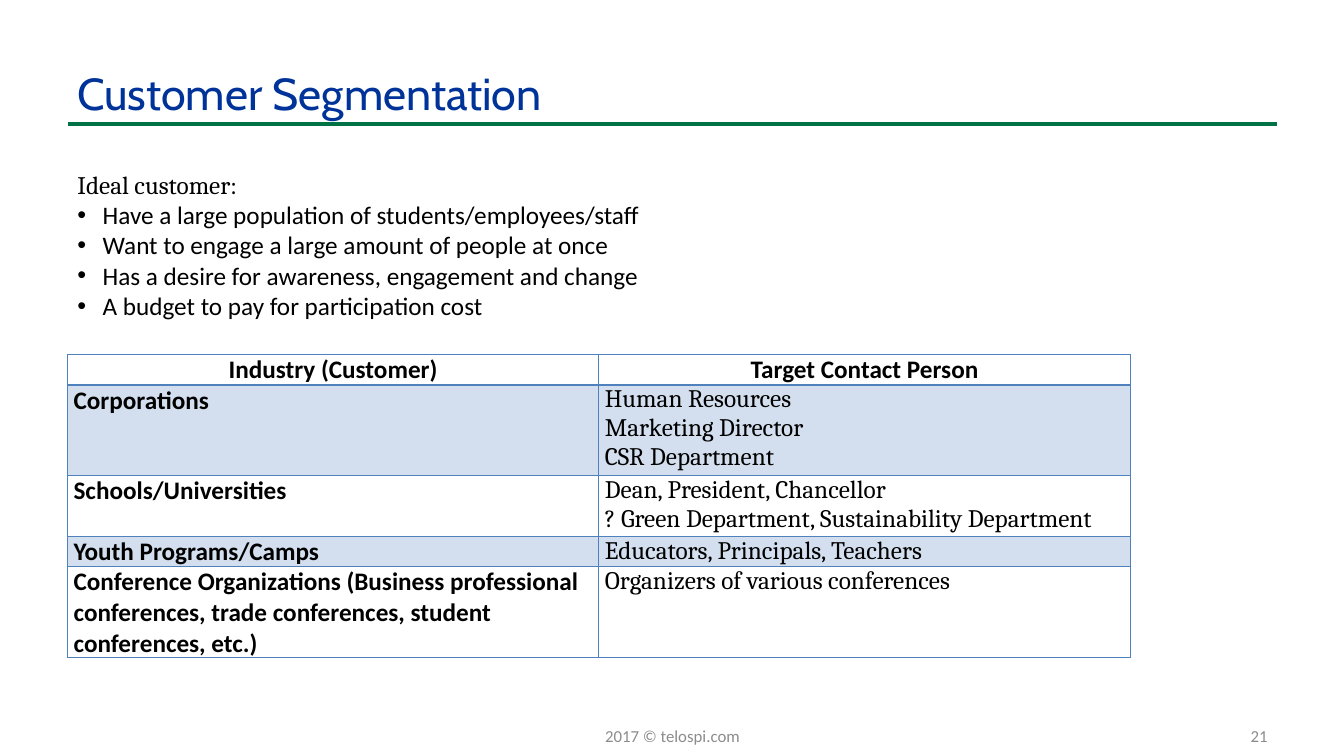
"""Build the Customer Segmentation slide."""
from lxml import etree
from pptx import Presentation
from pptx.dml.color import RGBColor
from pptx.enum.shapes import MSO_CONNECTOR
from pptx.enum.text import MSO_ANCHOR, PP_ALIGN
from pptx.oxml.ns import qn
from pptx.util import Inches, Pt

TITLE = "Customer Segmentation"
INTRO = "Ideal customer:"
TRAITS = [
    "Have a large population of students/employees/staff",
    "Want to engage a large amount of people at once",
    "Has a desire for awareness, engagement and change",
    "A budget to pay for participation cost",
]
HEADINGS = ("Industry (Customer)", "Target Contact Person")
SEGMENTS = [
    ("Corporations", ["Human Resources", "Marketing Director", "CSR Department"], 3),
    ("Schools/Universities",
     ["Dean, President, Chancellor", "? Green Department, Sustainability Department"], 2),
    ("Youth Programs/Camps", ["Educators, Principals, Teachers"], 1),
    ("Conference Organizations (Business professional conferences, "
     "trade conferences, student conferences, etc.)",
     ["Organizers of various conferences"], 3),
]
FOOTER = "2017 © telospi.com"
PAGE_NUMBER = "21"

BLACK = RGBColor(0x00, 0x00, 0x00)
WHITE = RGBColor(0xFF, 0xFF, 0xFF)
NAVY = RGBColor(0x00, 0x33, 0x99)
GREEN = RGBColor(0x00, 0x72, 0x45)
GRAY = RGBColor(0x8C, 0x8C, 0x8C)
BAND = RGBColor(0xD3, 0xDF, 0xEE)
BORDER = RGBColor(0x4F, 0x81, 0xBD)
LEFT, CENTER, RIGHT = PP_ALIGN.LEFT, PP_ALIGN.CENTER, PP_ALIGN.RIGHT
TOP, MIDDLE = MSO_ANCHOR.TOP, MSO_ANCHOR.MIDDLE
STRAIGHT = MSO_CONNECTOR.STRAIGHT

MARGIN = 0.67
LINE_HEIGHT = 0.3
COLUMN_WIDTH = 5.27


def set_font(para, name, size=18, color=BLACK, bold=False):
    font = para.font
    font.name, font.size, font.bold = name, Pt(size), bold
    font.color.rgb = color


def add_box(page, left, top, width, height, anchor=MIDDLE):
    box = page.shapes.add_textbox(Inches(left), Inches(top), Inches(width), Inches(height))
    frame = box.text_frame
    frame.word_wrap = True
    frame.vertical_anchor = anchor
    return frame


def add_label(page, place, text, align, name, size, color):
    para = add_box(page, *place).paragraphs[0]
    para.text, para.alignment = text, align
    set_font(para, name, size, color)
    return para


def add_bullet(para):
    properties = para._p.get_or_add_pPr()
    properties.set("marL", str(Inches(0.25)))
    properties.set("indent", str(-Inches(0.25)))
    etree.SubElement(properties, qn("a:buFont")).set("typeface", "Arial")
    etree.SubElement(properties, qn("a:buChar")).set("char", "•")


def add_rule(page):
    y = Inches(1.23)
    rule = page.shapes.add_connector(STRAIGHT, Inches(MARGIN), y, Inches(12.67), y)
    rule.line.color.rgb = GREEN
    rule.line.width = Pt(2.25)
    etree.SubElement(rule._element.spPr, qn("a:effectLst"))


def add_traits(page):
    frame = add_box(page, MARGIN, 1.63, 10.1, 1.61, TOP)
    intro = frame.paragraphs[0]
    intro.text = INTRO
    set_font(intro, "Cambria")
    for trait in TRAITS:
        para = frame.add_paragraph()
        para.text = trait
        add_bullet(para)
        set_font(para, "Calibri")


def set_borders(cell, top, bottom):
    properties = cell._tc.get_or_add_tcPr()
    for side, width in (("L", 1), ("R", 1), ("T", top), ("B", bottom)):
        line = etree.SubElement(properties, qn("a:ln" + side), w=str(Pt(width)))
        fill = etree.SubElement(line, qn("a:solidFill"))
        etree.SubElement(fill, qn("a:srgbClr")).set("val", str(BORDER))


def fill_cell(cell, row, lines, align, name, bold):
    cell.margin_left = cell.margin_right = Inches(0.06)
    cell.margin_top = cell.margin_bottom = 0
    set_borders(cell, 2.25 if row == 1 else 1, 2.25 if row == 0 else 1)
    cell.fill.solid()
    cell.fill.fore_color.rgb = BAND if row % 2 else WHITE
    cell.text = "\n".join(lines)
    for para in cell.text_frame.paragraphs:
        para.alignment = align
        set_font(para, name, bold=bold)


def add_segments(page):
    line_counts = [1] + [count for _, _, count in SEGMENTS]
    frame = page.shapes.add_table(
        len(line_counts), 2, Inches(MARGIN), Inches(3.52),
        Inches(2 * COLUMN_WIDTH), Inches(LINE_HEIGHT * sum(line_counts)))
    table = frame.table
    table.first_row = table.horz_banding = False
    for column in table.columns:
        column.width = Inches(COLUMN_WIDTH)
    for row, count in zip(table.rows, line_counts):
        row.height = Inches(LINE_HEIGHT * count)
    for column, heading in enumerate(HEADINGS):
        fill_cell(table.cell(0, column), 0, [heading], CENTER, "Calibri", True)
    for row, (industry, contacts, _) in enumerate(SEGMENTS, 1):
        fill_cell(table.cell(row, 0), row, [industry], LEFT, "Calibri", True)
        fill_cell(table.cell(row, 1), row, contacts, LEFT, "Cambria", False)


def main():
    deck = Presentation()
    deck.slide_width, deck.slide_height = Inches(13.33), Inches(7.5)
    page = deck.slides.add_slide(deck.slide_layouts[6])
    add_rule(page)
    add_label(page, (4.56, 7.1, 4.22, 0.4), FOOTER, CENTER, "Calibri", 12, GRAY)
    add_label(page, (9.56, 7.1, 3.11, 0.4), PAGE_NUMBER, RIGHT, "Calibri", 12, GRAY)
    title = add_label(page, (MARGIN, 0.33, 12, 1.25), TITLE, LEFT, "Cabin", 32, NAVY)
    title.line_spacing = 0.9
    add_traits(page)
    add_segments(page)
    deck.save("out.pptx")


if __name__ == "__main__":
    main()
